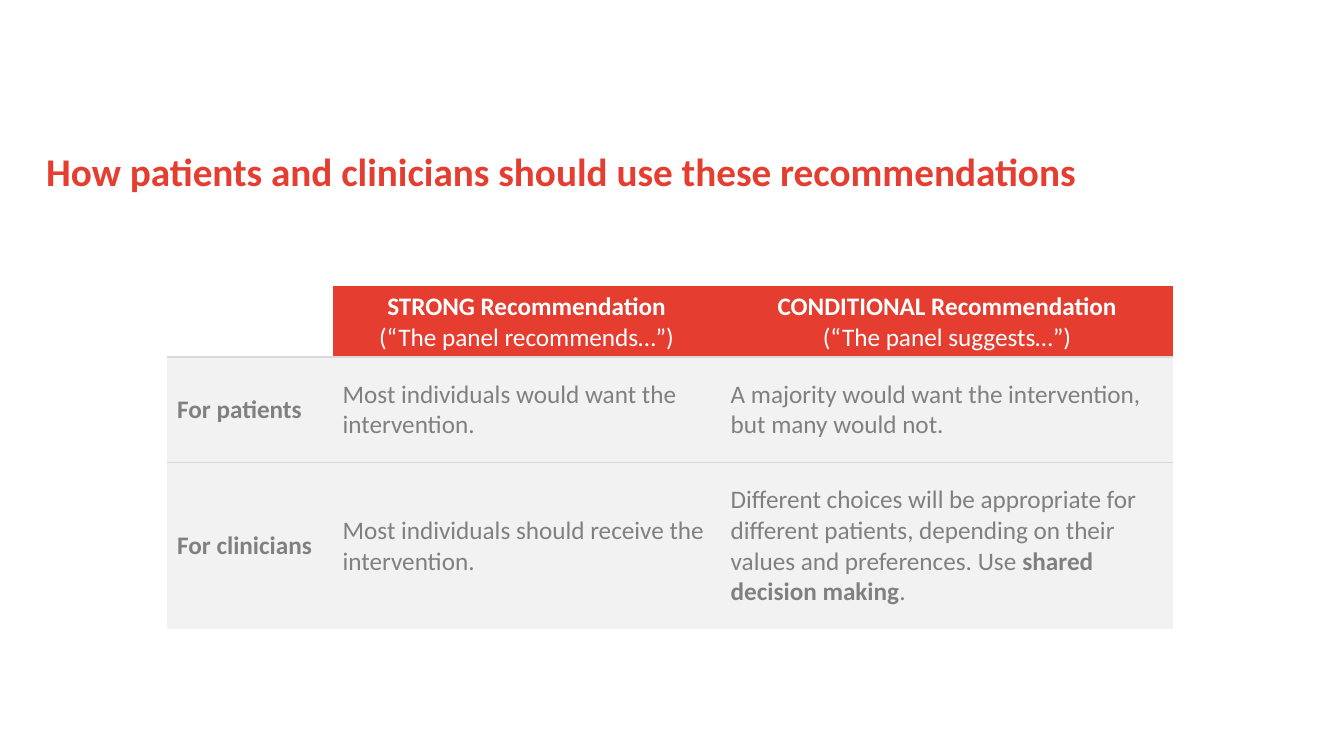
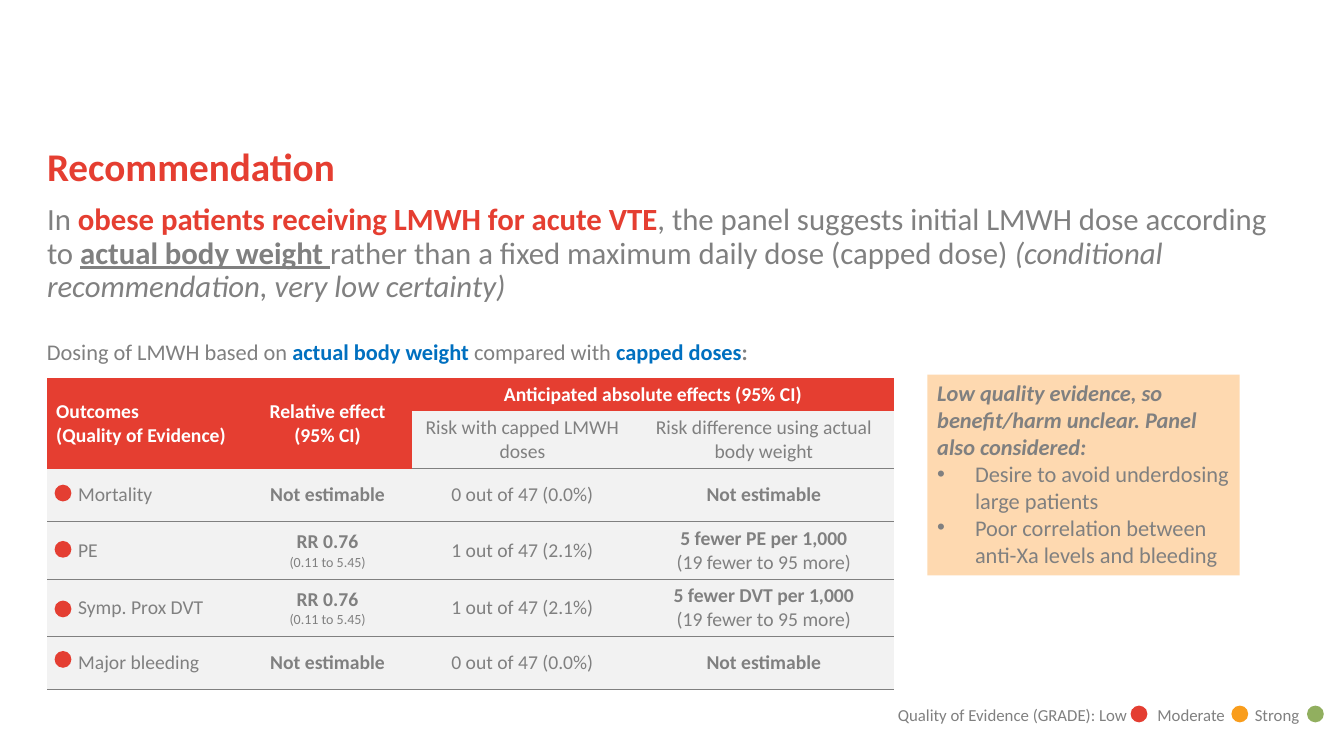
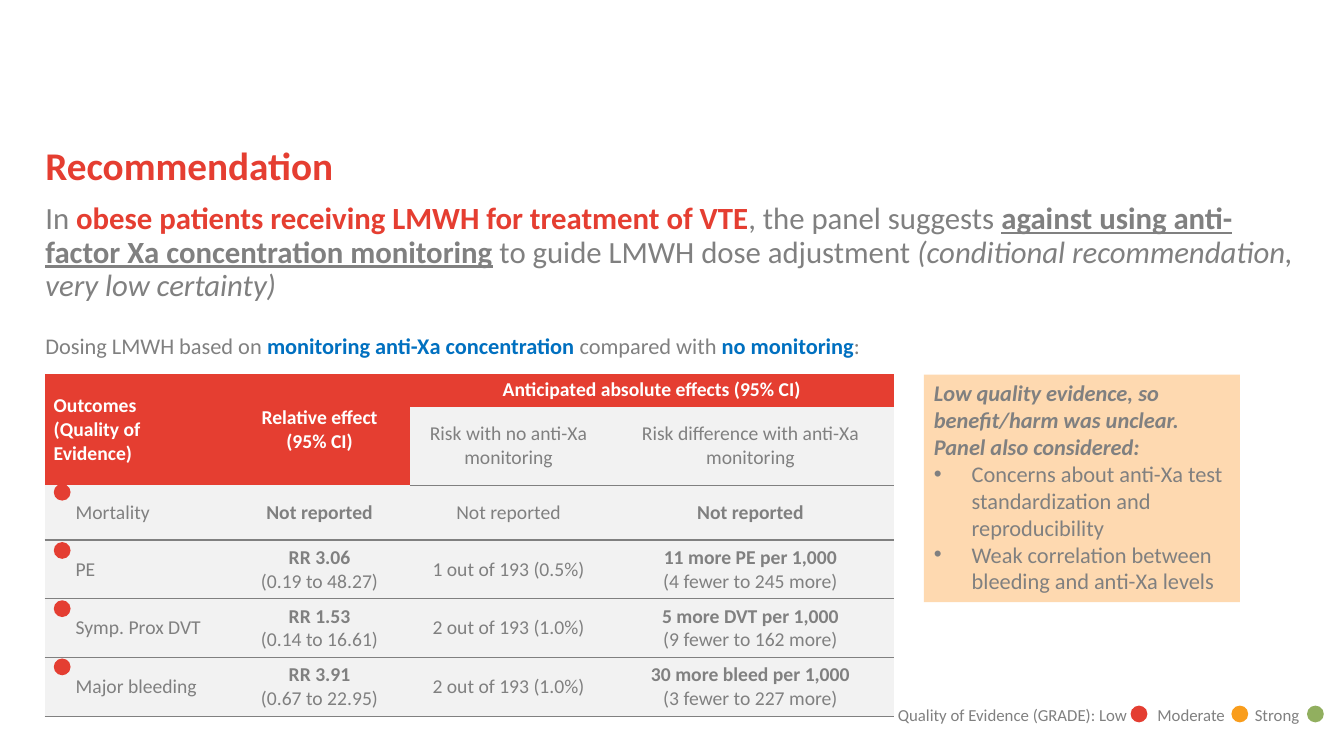
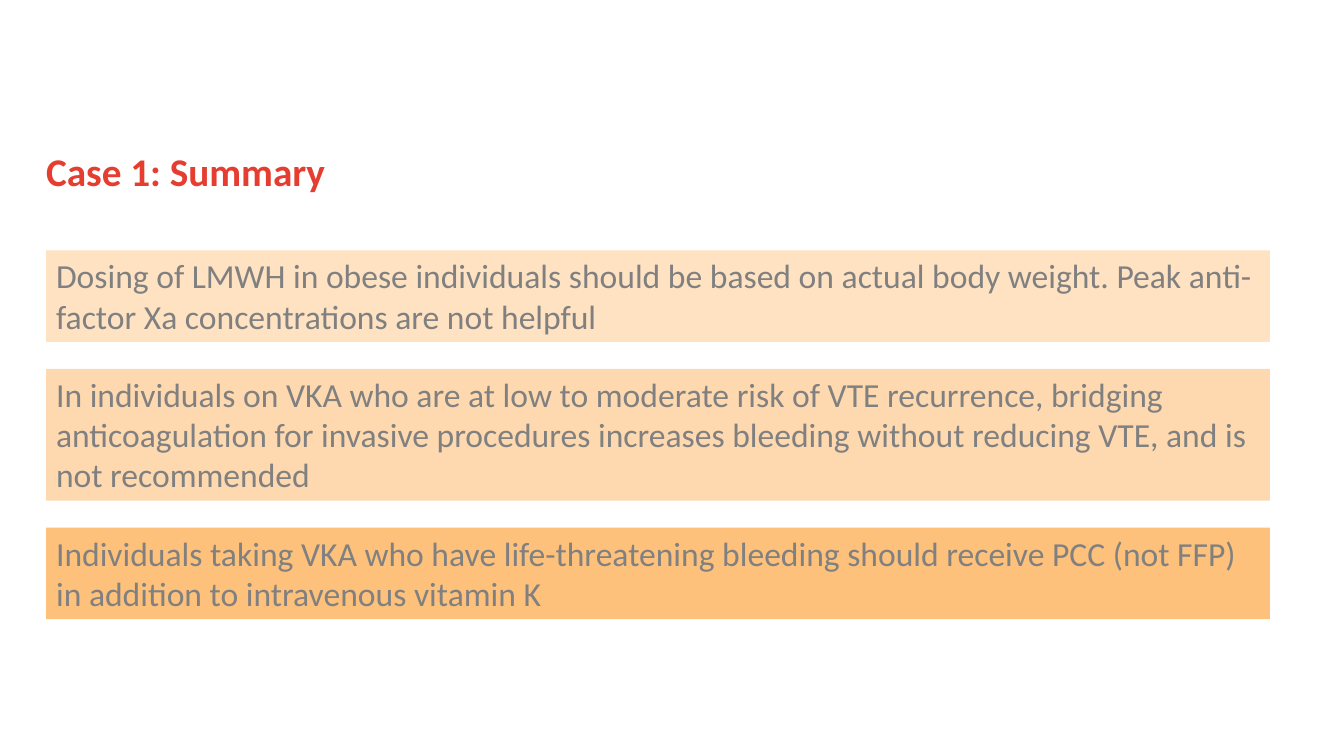
from lxml import etree
from pptx import Presentation
from pptx.dml.color import RGBColor
from pptx.enum.shapes import MSO_SHAPE
from pptx.enum.text import MSO_ANCHOR, PP_ALIGN
from pptx.oxml.ns import qn
from pptx.util import Inches, Pt

RECTANGLE, OVAL = MSO_SHAPE.RECTANGLE, MSO_SHAPE.OVAL
LEFT, CENTER = PP_ALIGN.LEFT, PP_ALIGN.CENTER
TOP, MIDDLE = MSO_ANCHOR.TOP, MSO_ANCHOR.MIDDLE

COLUMNS, ROWS, CELLS_PER_INCH = 160, 90, 12
NO_GRID_STYLE = "{2D5ABB26-0587-4C30-8999-92F81FD0307C}"
COLORS = {
    "red": "E53E31", "grey": "808080", "blue": "0070C0", "white": "FFFFFF",
    "pale": "F2F2F2", "rule": "D9D9D9", "peach": "FED9B0", "apricot": "FDC17B",
    "low": "E43E32", "moderate": "F99D1C", "strong": "91AF5F",
}
EMPHASIS = {
    "plain": {},
    "strong": {"bold": True},
    "key": {"bold": True, "color": "red"},
    "compared": {"bold": True, "color": "blue"},
    "underlined": {"bold": True, "underline": True},
    "italic": {"italic": True},
    "lead": {"bold": True, "italic": True},
    "small": {"size": Pt(10)},
    "title": {"size": Pt(28), "bold": True, "color": "red"},
    "header": {"bold": True, "color": "white"},
    "subheader": {"color": "white"},
}


def grid(cells):
    """Convert grid cells to a length."""
    return Inches(cells / CELLS_PER_INCH)


class Slides:
    """Hold the deck style and the current page."""

    def __init__(self):
        self.deck = Presentation()
        self.deck.slide_width, self.deck.slide_height = grid(COLUMNS), grid(ROWS)
        self.page = None

    def new_page(self):
        self.page = self.deck.slides.add_slide(self.deck.slide_layouts[6])

    def set_text(self, frame, paragraphs, size, align=LEFT, **layout):
        frame.word_wrap = True
        for index, content in enumerate(paragraphs):
            para = frame.paragraphs[0] if index == 0 else frame.add_paragraph()
            para.alignment = align
            for name, value in layout.items():
                if index or name != "space_before":
                    setattr(para, name, value)
            for part in content if isinstance(content, list) else [content]:
                text, emphasis = (part, "plain") if isinstance(part, str) else part
                span = para.add_run()
                span.text = text
                values = {"name": "Calibri", "size": Pt(size), "color": "grey"} | EMPHASIS[emphasis]
                span.font.color.rgb = RGBColor.from_string(COLORS[values.pop("color")])
                for name, value in values.items():
                    setattr(span.font, name, value)

    def text(self, area, paragraphs, size, **layout):
        box = self.page.shapes.add_textbox(*map(grid, area))
        frame = box.text_frame
        for side in ("left", "top", "right", "bottom"):
            setattr(frame, f"margin_{side}", 0)
        self.set_text(frame, paragraphs, size, **layout)

    def title(self, text):
        self.text((5.5, 17.6, 144, 9.4), [(text, "title")], 28)

    def shape(self, kind, area, color, shapes=None):
        shape = (shapes or self.page.shapes).add_shape(kind, *map(grid, area))
        shape.shadow.inherit = False
        shape.fill.solid()
        shape.fill.fore_color.rgb = RGBColor.from_string(COLORS[color])
        shape.line.fill.background()
        return shape

    def panel(self, area, color, paragraphs, size, opacity=100):
        panel = self.shape(RECTANGLE, area, color)
        panel.text_frame.vertical_anchor = TOP
        self.set_text(panel.text_frame, paragraphs, size)
        if opacity < 100:
            fill = panel.element.spPr.find(qn("a:solidFill"))
            etree.SubElement(fill[0], qn("a:alpha"), val=str(opacity * 1000))
        return panel

    def considerations(self, area, lead, points):
        panel = self.panel(area, "peach", [(lead, "lead"), *points], 16)
        for para in panel.text_frame.paragraphs[1:]:
            properties = para._p.get_or_add_pPr()
            properties.set("marL", str(grid(4.5)))
            properties.set("indent", str(-grid(4.5)))
            etree.SubElement(properties, qn("a:buFont"), typeface="Arial")
            etree.SubElement(properties, qn("a:buChar"), char="•")

    def dot(self, left, top, color="low", shapes=None):
        self.shape(OVAL, (left, top, 2, 2), color, shapes)

    def legend(self):
        group = self.page.shapes.add_group_shape()
        box = group.shapes.add_textbox(*map(grid, (105.7, 83.3, 54.3, 3.6)))
        para = box.text_frame.paragraphs[0]
        tabs = etree.SubElement(para._p.get_or_add_pPr(), qn("a:tabLst"))
        for stop in (30.9, 42.5):
            etree.SubElement(tabs, qn("a:tab"), pos=str(grid(stop)), algn="l")
        self.set_text(box.text_frame, ["Quality of Evidence (GRADE): Low\tModerate\tStrong"], 12)
        for left, color in ((134.6, "low"), (146.6, "moderate"), (155.6, "strong")):
            self.dot(left, 84, color, group.shapes)

    def table(self, left, top, widths, heights):
        area = (left, top, sum(widths), sum(heights))
        frame = self.page.shapes.add_table(len(heights), len(widths), *map(grid, area))
        table = frame.table
        table.first_row = table.horz_banding = False
        for style in frame.element.iter(qn("a:tableStyleId")):
            style.text = NO_GRID_STYLE
        for column, width in zip(table.columns, widths):
            column.width = grid(width)
        for row, height in zip(table.rows, heights):
            row.height = grid(height)
        return table

    def cell(self, cell, paragraphs, size, color="pale", align=LEFT, margins=(1.2, 0.6), border=None):
        across, down = map(grid, margins)
        values = {"margin_left": across, "margin_right": across, "margin_top": down,
                  "margin_bottom": down, "vertical_anchor": MIDDLE}
        for name, value in values.items():
            setattr(cell, name, value)
        cell.fill.solid()
        cell.fill.fore_color.rgb = RGBColor.from_string(COLORS[color])
        self.set_text(cell.text_frame, paragraphs, size, align)
        if border:
            side, line_color = border
            line = etree.Element(qn(f"a:{side}"), w=str(Pt(1)))
            fill = etree.SubElement(line, qn("a:solidFill"))
            etree.SubElement(fill, qn("a:srgbClr"), val=COLORS[line_color])
            cell._tc.get_or_add_tcPr().insert(0, line)

    def outcome_table(self, left, top, widths, heights, subheads, outcomes):
        table = self.table(left, top, widths, heights)
        for start, end in (((0, 0), (1, 0)), ((0, 1), (1, 1)), ((0, 2), (0, 3))):
            table.cell(*start).merge(table.cell(*end))
        headings = (
            ("Outcomes", "(Quality of Evidence)"),
            ("Relative effect", "(95% CI)"),
            ("Anticipated absolute effects (95% CI)",),
        )
        margins = (1.1, 0.4)
        for column, lines in enumerate(headings):
            self.cell(table.cell(0, column), [(line, "header") for line in lines], 14, "red",
                      CENTER if column else LEFT, margins)
        body = [(None, None, *([subhead] for subhead in subheads))]
        body += [([name], *effects) for name, *effects in outcomes]
        for row, contents in enumerate(body, 1):
            for column, paragraphs in enumerate(contents):
                if paragraphs:
                    self.cell(table.cell(row, column), paragraphs, 14, "pale",
                              CENTER if column else LEFT, margins, ("lnB", "grey"))
            if row > 1:
                table.cell(row, 0).margin_left = grid(3.7)

    def recommendation(self, area, statement, caption_top, caption):
        self.text(area, [("Recommendation", "title"), statement], 22,
                  line_spacing=0.9, space_before=Pt(10))
        self.text((area[0], caption_top, 150, 3.2), [caption], 16)


def effect(main, interval, emphasis="plain"):
    """Pair a bold effect with its interval."""
    return [(main, "strong"), (interval, emphasis)]


def guidance_page(slides):
    slides.new_page()
    slides.title("How patients and clinicians should use these recommendations")
    table = slides.table(19.9, 34.1, (19.7, 46.2, 53.9), (8.4, 12.6, 19.8))
    table.cell(0, 0).fill.background()
    headings = (("STRONG Recommendation", "(“The panel recommends…”)"),
                ("CONDITIONAL Recommendation", "(“The panel suggests…”)"))
    for column, (strength, wording) in enumerate(headings, 1):
        slides.cell(table.cell(0, column), [(strength, "header"), (wording, "subheader")],
                    18, "red", CENTER)
    readers = (
        (("For patients", "strong"),
         "Most individuals would want the intervention.",
         "A majority would want the intervention, but many would not."),
        (("For clinicians", "strong"),
         "Most individuals should receive the intervention.",
         ["Different choices will be appropriate for different patients, depending on their "
          "values and preferences. Use ", ("shared decision making", "strong"), "."]),
    )
    for row, contents in enumerate(readers, 1):
        for column, content in enumerate(contents):
            slides.cell(table.cell(row, column), [content], 18, border=("lnT", "rule"))


def body_weight_page(slides):
    slides.new_page()
    slides.recommendation(
        (5.6, 17.6, 148.7, 25.8),
        ["In ", ("obese patients receiving LMWH for acute VTE", "key"),
         ", the panel suggests initial LMWH dose according to ",
         ("actual body weight ", "underlined"),
         "rather than a fixed maximum daily dose (capped dose) ",
         ("(conditional recommendation, very low certainty)", "italic")],
        40.2,
        ["Dosing of LMWH based on ", ("actual body weight ", "compared"), "compared with ",
         ("capped doses", "compared"), (":", "strong")])
    unknown = [("Not estimable", "strong")]
    ratio = effect("RR 0.76", "(0.11 to 5.45)", "small")
    none, one = ["0 out of 47 (0.0%)"], ["1 out of 47 (2.1%)"]
    slides.outcome_table(
        5.6, 45, (23.4, 20, 26.4, 31.1), (3.9, 6.9, 6.3, 6.9, 6.8, 6.3),
        ("Risk with capped LMWH doses", "Risk difference using actual body weight"),
        (("Mortality", unknown, none, unknown),
         ("PE", ratio, one, effect("5 fewer PE per 1,000", "(19 fewer to 95 more)")),
         ("Symp. Prox DVT", ratio, one, effect("5 fewer DVT per 1,000", "(19 fewer to 95 more)")),
         ("Major bleeding", unknown, none, unknown)))
    slides.considerations(
        (110.4, 44.6, 37.2, 23.9),
        "Low quality evidence, so benefit/harm unclear. Panel also considered:",
        ("Desire to avoid underdosing large patients",
         "Poor correlation between anti-Xa levels and bleeding"))
    for top in (57.7, 64.4, 71.5, 77.5):
        slides.dot(6.5, top)
    slides.legend()


def monitoring_page(slides):
    slides.new_page()
    slides.recommendation(
        (5.4, 17.5, 148.7, 20.5),
        ["In ", ("obese patients receiving LMWH for treatment of VTE", "key"),
         ", the panel suggests ",
         ("against using anti-factor Xa concentration monitoring", "underlined"),
         " to guide LMWH dose adjustment ",
         ("(conditional recommendation, very low certainty)", "italic")],
        39.5,
        ["Dosing LMWH based on ", ("monitoring anti-Xa concentration ", "compared"),
         "compared with ", ("no monitoring", "compared"), ":"])
    unknown = [("Not reported", "strong")]
    two = ["2 out of 193 (1.0%)"]
    slides.outcome_table(
        5.3, 44.5, (22, 21.5, 23.5, 34.1), (3.9, 9.4, 6.5, 7, 7, 7),
        ("Risk with no anti-Xa monitoring", "Risk difference with anti-Xa monitoring"),
        (("Mortality", unknown, ["Not reported"], unknown),
         ("PE", effect("RR 3.06", "(0.19 to 48.27)"), ["1 out of 193 (0.5%)"],
          effect("11 more PE per 1,000", "(4 fewer to 245 more)")),
         ("Symp. Prox DVT", effect("RR 1.53", "(0.14 to 16.61)"), two,
          effect("5 more DVT per 1,000", "(9 fewer to 162 more)")),
         ("Major bleeding", effect("RR 3.91", "(0.67 to 22.95)"), two,
          effect("30 more bleed per 1,000", "(3 fewer to 227 more)"))))
    slides.considerations(
        (110, 44.6, 37.6, 27.1),
        "Low quality evidence, so benefit/harm was unclear. Panel also considered:",
        ("Concerns about anti-Xa test standardization and reproducibility",
         "Weak correlation between bleeding and anti-Xa levels"))
    slides.legend()
    for row in range(4):
        slides.dot(6.4, 57.6 + 6.93 * row)


def summary_page(slides):
    slides.new_page()
    slides.title("Case 1: Summary")
    top, gap = 29.8, 3.2
    messages = (
        (10.9, "peach", 76, "Dosing of LMWH in obese individuals should be based on actual body "
         "weight. Peak anti-factor Xa concentrations are not helpful"),
        (15.7, "peach", 100, "In individuals on VKA who are at low to moderate risk of VTE "
         "recurrence, bridging anticoagulation for invasive procedures increases bleeding "
         "without reducing VTE, and is not recommended"),
        (10.9, "apricot", 100, "Individuals taking VKA who have life-threatening bleeding should "
         "receive PCC (not FFP) in addition to intravenous vitamin K"),
    )
    for height, color, opacity, message in messages:
        slides.panel((5.5, top, 145.7, height), color, [message], 24, opacity)
        top += height + gap


def main():
    slides = Slides()
    for build in (guidance_page, body_weight_page, monitoring_page, summary_page):
        build(slides)
    slides.deck.save("out.pptx")


if __name__ == "__main__":
    main()
